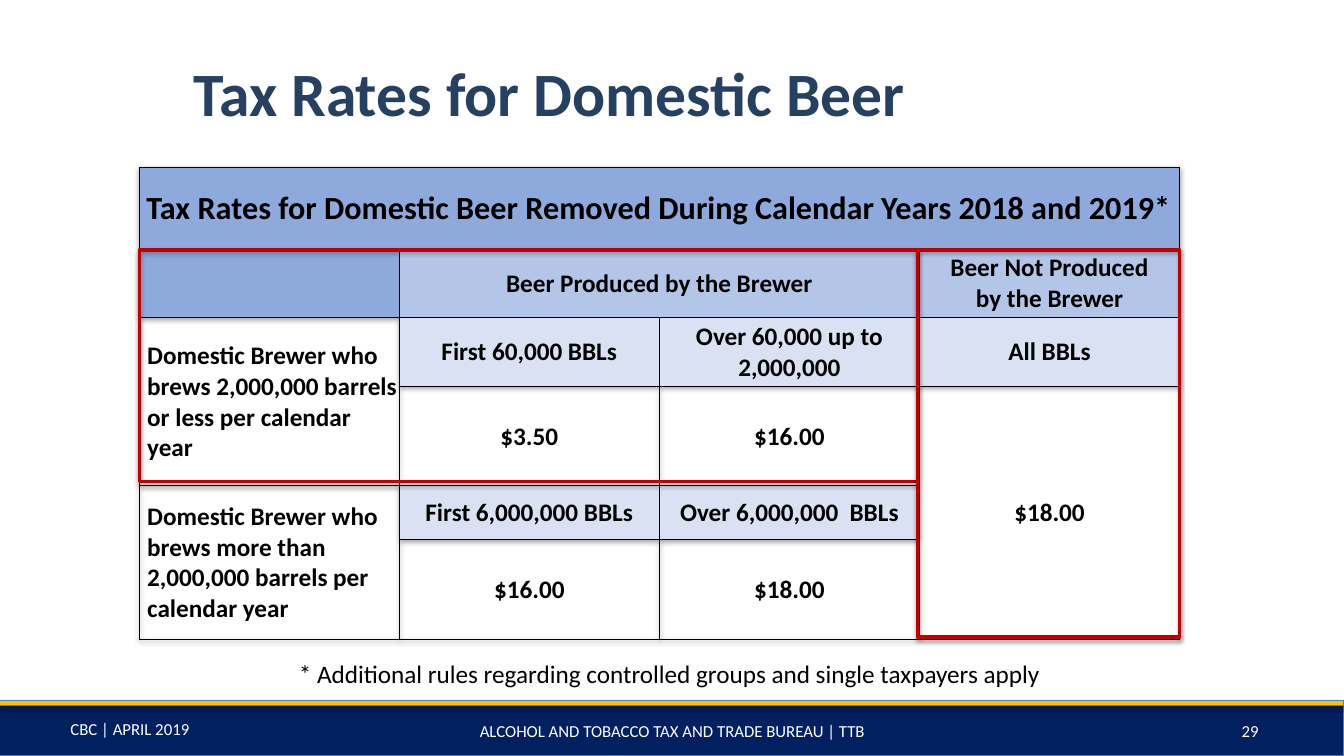
import dataclasses

import lxml.etree
import pptx
import pptx.dml.color
import pptx.enum.shapes
import pptx.enum.text
import pptx.oxml.ns
import pptx.util

ALIGN = pptx.enum.text.PP_ALIGN
ANCHOR = pptx.enum.text.MSO_ANCHOR
qn = pptx.oxml.ns.qn


@dataclasses.dataclass(frozen=True)
class Theme:
    font: str = "Calibri"
    ink: str = "000000"
    white: str = "FFFFFF"
    title: str = "254061"
    navy: str = "002060"
    gold: str = "FFC000"
    band_edge: str = "4B7EBC"
    highlight: str = "C00000"
    header: str = "8EA9DB"
    subheader: str = "B4C6E7"
    tier: str = "D9E1F2"
    title_size: int = 44
    heading_size: int = 23
    body_size: int = 18
    footer_size: int = 12
    edge_width: float = 0.75
    highlight_width: float = 2.25
    grid_width: float = 0.5


def px(length):
    """One px is a hundredth of an inch."""
    return pptx.util.Emu(length * 9144)


def rgb(colour):
    return pptx.dml.color.RGBColor.from_string(colour)


class SlideBuilder:
    def __init__(self, theme, slide):
        self.theme = theme
        self.slide = slide

    def add_lines(self, frame, text, size, colour, bold=False, align=ALIGN.CENTER):
        for index, line in enumerate(text.split("\n")):
            paragraph = frame.add_paragraph() if index else frame.paragraphs[0]
            paragraph.alignment = align
            run = paragraph.add_run()
            run.text = line
            run.font.name = self.theme.font
            run.font.size = pptx.util.Pt(size)
            run.font.bold = bold
            run.font.color.rgb = rgb(colour)

    def add_shadow(self, effects):
        shadow = lxml.etree.SubElement(
            effects, qn("a:outerShdw"), blurRad="40000", dist="23000",
            dir="5400000", rotWithShape="0")
        black = lxml.etree.SubElement(shadow, qn("a:srgbClr"), val="000000")
        lxml.etree.SubElement(black, qn("a:alpha"), val="35000")

    def title(self, text, box):
        title = self.slide.shapes.title
        title.left, title.top, title.width, title.height = map(px, box)
        frame = title.text_frame
        frame.word_wrap = True
        frame.auto_size = pptx.enum.text.MSO_AUTO_SIZE.NONE
        frame.vertical_anchor = ANCHOR.MIDDLE
        self.add_lines(frame, text, self.theme.title_size, self.theme.title,
                       True, ALIGN.LEFT)

    def text(self, text, box, size, colour, anchor=ANCHOR.TOP):
        frame = self.slide.shapes.add_textbox(*map(px, box)).text_frame
        frame.word_wrap = True
        frame.vertical_anchor = anchor
        self.add_lines(frame, text, size, colour)

    def rectangle(self, box, line, width, fill=None):
        shape = self.slide.shapes.add_shape(
            pptx.enum.shapes.MSO_SHAPE.RECTANGLE, *map(px, box))
        if fill:
            shape.fill.solid()
            shape.fill.fore_color.rgb = rgb(fill)
        else:
            shape.fill.background()
        shape.line.color.rgb = rgb(line)
        shape.line.width = pptx.util.Pt(width)
        shape.shadow.inherit = False
        self.add_shadow(shape.element.spPr.find(qn("a:effectLst")))

    def table(self, box, row_heights, column_width, columns, cells):
        table = self.slide.shapes.add_table(
            len(row_heights), columns, *map(px, box)).table
        table.first_row = table.horz_banding = False
        effects = lxml.etree.Element(qn("a:effectLst"))
        table._tbl.tblPr.insert(0, effects)
        self.add_shadow(effects)
        for row, height in zip(table.rows, row_heights):
            row.height = px(height)
        for column in table.columns:
            column.width = px(column_width)
        for cell in table.iter_cells():
            cell.fill.background()
            self.cell_borders(cell)
        for (row, column), (text, fill, size, align, span) in cells.items():
            cell = table.cell(row, column)
            if span != (1, 1):
                cell.merge(table.cell(row + span[0] - 1, column + span[1] - 1))
            if fill:
                cell.fill.solid()
                cell.fill.fore_color.rgb = rgb(fill)
            cell.vertical_anchor = ANCHOR.MIDDLE
            cell.margin_left = px(8 if align == ALIGN.LEFT else 1)
            cell.margin_right = cell.margin_top = px(1)
            cell.margin_bottom = 0
            if text:
                self.add_lines(cell.text_frame, text, size, self.theme.ink,
                               True, align)

    def cell_borders(self, cell):
        properties = cell._tc.get_or_add_tcPr()
        width = str(pptx.util.Pt(self.theme.grid_width))
        for index, side in enumerate(("a:lnL", "a:lnR", "a:lnT", "a:lnB")):
            border = lxml.etree.Element(qn(side), w=width)
            fill = lxml.etree.SubElement(border, qn("a:solidFill"))
            lxml.etree.SubElement(fill, qn("a:srgbClr"), val=self.theme.ink)
            properties.insert(index, border)


def main():
    theme = Theme()
    deck = pptx.Presentation()
    deck.slide_width, deck.slide_height = px(1333), px(750)
    page = SlideBuilder(theme, deck.slides.add_slide(deck.slide_layouts[5]))

    # Footer bands
    for height, colour in ((55, theme.navy), (5, theme.gold)):
        page.rectangle((0, 695, 1333, height), theme.band_edge,
                       theme.edge_width, colour)

    # Title, footer and footnote
    page.title("Tax Rates for Domestic Beer", (182, 50, 1084, 83))
    page.text("CBC | APRIL 2019", (1, 708, 256, 30),
              theme.footer_size, theme.white)
    for text, left, width in (
            ("29", 1151, 178),
            ("ALCOHOL AND TOBACCO TAX AND TRADE BUREAU | TTB", 356, 622)):
        page.text(text, (left, 705, width, 40), theme.footer_size,
                  theme.white, ANCHOR.MIDDLE)
    page.text("* Additional rules regarding controlled groups and single "
              "taxpayers apply", (218, 648, 892, 40),
              theme.body_size, theme.ink)

    # Tax rate table
    def entry(text, fill=None, span=(1, 1), align=ALIGN.CENTER,
              size=theme.body_size):
        return text, fill, size, align, span

    rates = {
        (0, 0): entry("Tax Rates for Domestic Beer Removed During Calendar "
                      "Years 2018 and 2019*", theme.header, (1, 4),
                      size=theme.heading_size),
        (1, 0): entry("", theme.header),
        (1, 1): entry("Beer Produced by the Brewer", theme.subheader, (1, 2)),
        (1, 3): entry("Beer Not Produced\nby the Brewer", theme.subheader),
        (2, 3): entry("All BBLs", theme.tier),
        (3, 3): entry("$18.00", span=(3, 1)),
    }
    brewers = (
        ("Domestic Brewer who brews 2,000,000 barrels or less per calendar year",
         (("First 60,000 BBLs", "$3.50"),
          ("Over 60,000 up to 2,000,000", "$16.00"))),
        ("Domestic Brewer who brews more than 2,000,000 barrels per calendar year",
         (("First 6,000,000 BBLs", "$16.00"),
          ("Over 6,000,000  BBLs", "$18.00"))),
    )
    for row, (brewer, tiers) in zip((2, 4), brewers):
        rates[row, 0] = entry(brewer, span=(2, 1), align=ALIGN.LEFT)
        for column, (tier, rate) in enumerate(tiers, 1):
            rates[row, column] = entry(tier, theme.tier)
            rates[row + 1, column] = entry(rate)
    page.table((138, 166, 1032, 468), (81, 68, 68, 99, 53, 99), 258, 4, rates)

    # Highlight frames
    for box in ((138, 248, 772, 230), (910, 248, 260, 384)):
        page.rectangle(box, theme.highlight, theme.highlight_width)

    deck.save("out.pptx")


if __name__ == "__main__":
    main()
